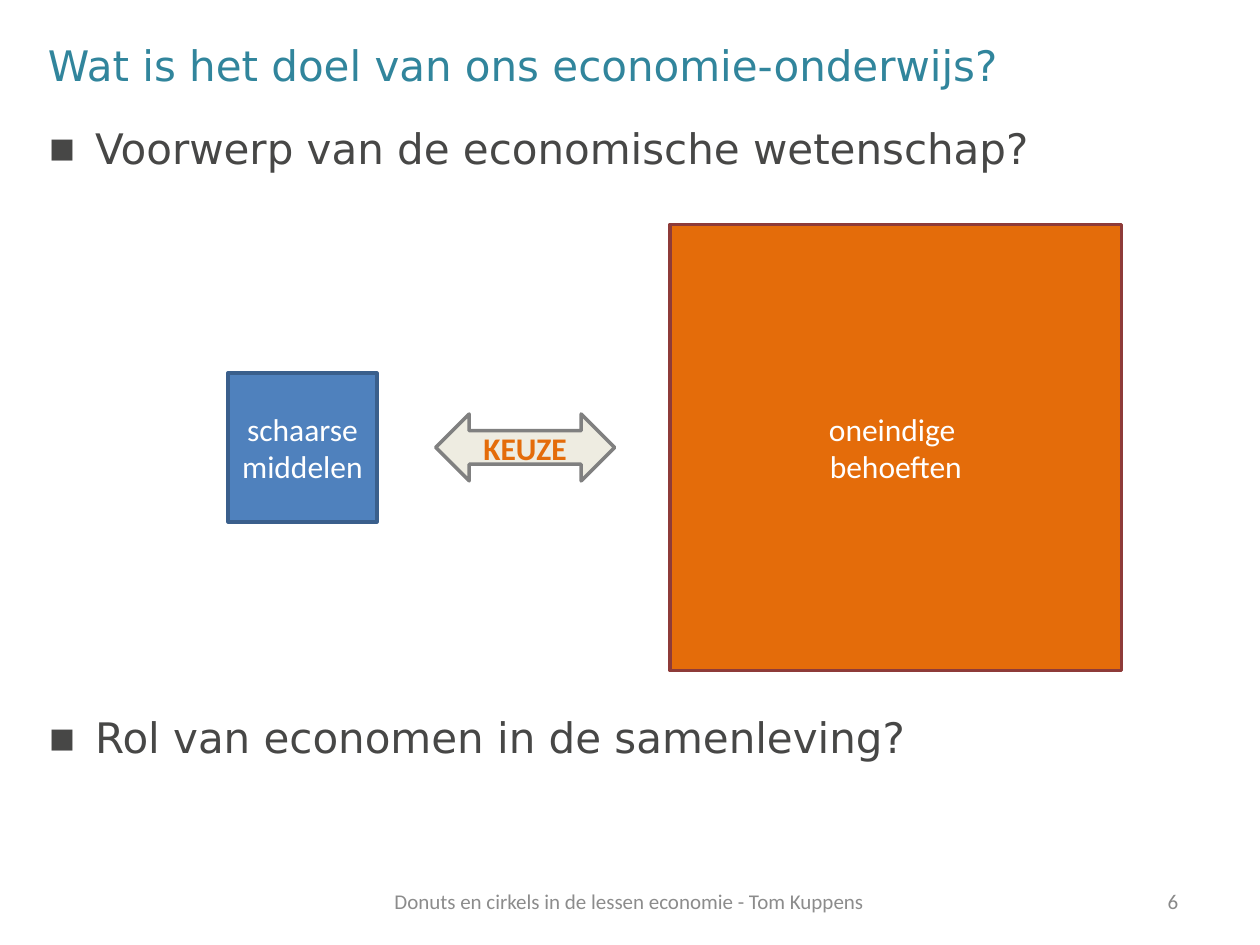
from dataclasses import dataclass

from lxml import etree
from pptx import Presentation
from pptx.dml.color import RGBColor
from pptx.enum.shapes import MSO_SHAPE
from pptx.enum.text import MSO_ANCHOR, MSO_AUTO_SIZE, PP_ALIGN
from pptx.oxml.ns import qn
from pptx.util import Pt

LEFT, CENTER = PP_ALIGN.LEFT, PP_ALIGN.CENTER
TOP, MIDDLE = MSO_ANCHOR.TOP, MSO_ANCHOR.MIDDLE
RECT, ARROW = MSO_SHAPE.RECTANGLE, MSO_SHAPE.LEFT_RIGHT_ARROW


@dataclass(frozen=True)
class Theme:
    head: str = "DejaVu Sans"
    base: str = "Calibri"
    large: int = 24
    label: int = 18
    small: int = 12
    teal: str = "31859C"
    dark: str = "474746"
    foot: str = "8C8C8C"
    page: str = "898989"
    white: str = "FFFFFF"
    blue: str = "4F81BD"
    navy: str = "3A5F8C"
    orange: str = "E46C0A"
    maroon: str = "8E3B39"
    cream: str = "EEECE1"
    gray: str = "808080"


def bullet(para, char, font, indent):
    """Give a paragraph a hanging bullet."""
    props = para._p.get_or_add_pPr()
    props.set("marL", str(Pt(indent)))
    props.set("indent", str(-Pt(indent)))
    etree.SubElement(props, qn("a:buFont")).set("typeface", font)
    etree.SubElement(props, qn("a:buChar")).set("char", char)


def write(shape, *lines, font, size, color, bold=False, align=CENTER,
          anchor=MIDDLE, mark=None, indent=27, gap=0):
    """Fill a shape with one paragraph per line; gap separates them."""
    frame = shape.text_frame
    frame.word_wrap = True
    frame.auto_size = MSO_AUTO_SIZE.NONE
    frame.vertical_anchor = anchor
    for i, line in enumerate(lines):
        para = frame.add_paragraph() if i else frame.paragraphs[0]
        if mark:
            bullet(para, mark, font, indent)
        para.alignment = align
        para.space_before = Pt(gap if i else 0)
        run = para.add_run()
        run.text = line
        run.font.name = font
        run.font.size = Pt(size)
        run.font.bold = bold
        run.font.color.rgb = RGBColor.from_string(color)


def place(shape, *box):
    shape.left, shape.top, shape.width, shape.height = map(Pt, box)


class Deck:
    """Holds the theme and the current slide."""

    def __init__(self, prs, theme):
        self.theme = theme
        self.slide = prs.slides.add_slide(prs.slide_layouts[1])

    def title(self, text, *box):
        t = self.theme
        shape = self.slide.shapes.title
        place(shape, *box)
        write(shape, text, font=t.head, size=t.large, color=t.teal, align=LEFT)

    def body(self, lines, *box, gap):
        t = self.theme
        shape = self.slide.placeholders[1]
        place(shape, *box)
        write(shape, *lines, font=t.head, size=t.large, color=t.dark,
              align=LEFT, anchor=TOP, mark="▪", gap=gap)

    def note(self, text, *box, color):
        t = self.theme
        shape = self.slide.shapes.add_textbox(*map(Pt, box))
        write(shape, text, font=t.base, size=t.small, color=color)

    def block(self, kind, lines, left, mid, width, height, fill, line, color,
              bold=False):
        """Draw a labelled shape centred on the height mid."""
        t = self.theme
        box = left, mid - height / 2, width, height
        shape = self.slide.shapes.add_shape(kind, *map(Pt, box))
        shape.shadow.inherit = False
        shape.fill.solid()
        shape.fill.fore_color.rgb = RGBColor.from_string(fill)
        shape.line.color.rgb = RGBColor.from_string(line)
        shape.line.width = Pt(2)
        write(shape, *lines, font=t.base, size=t.label, color=color, bold=bold)


def main():
    prs = Presentation()
    prs.slide_width, prs.slide_height = Pt(720), Pt(540)
    t = Theme()
    deck = Deck(prs, t)

    left, width = 20.2, 680.4
    deck.title("Wat is het doel van ons economie-onderwijs?",
               left, 15.1, width, 43.2)
    deck.body(["Voorwerp van de economische wetenschap?",
               "Rol van economen in de samenleving?"],
              left, 66.2, width, 404.6, gap=308)

    foot, tall = 500.4, 28.8
    deck.note("Donuts en cirkels in de lessen economie - Tom Kuppens",
              131, foot, 457.2, tall, color=t.foot)
    deck.note("6", 640.8, foot, 59, tall, color=t.page)

    mid = 255.7
    deck.block(RECT, ["schaarse middelen"], 130.3, mid, 85, 85,
               t.blue, t.navy, t.white)
    deck.block(RECT, ["oneindige ", "behoeften"], 383, mid, 257.8, 255,
               t.orange, t.maroon, t.white)
    deck.block(ARROW, ["KEUZE"], 249, mid, 102.2, 38.2,
               t.cream, t.gray, t.orange, bold=True)

    prs.save("out.pptx")


if __name__ == "__main__":
    main()
